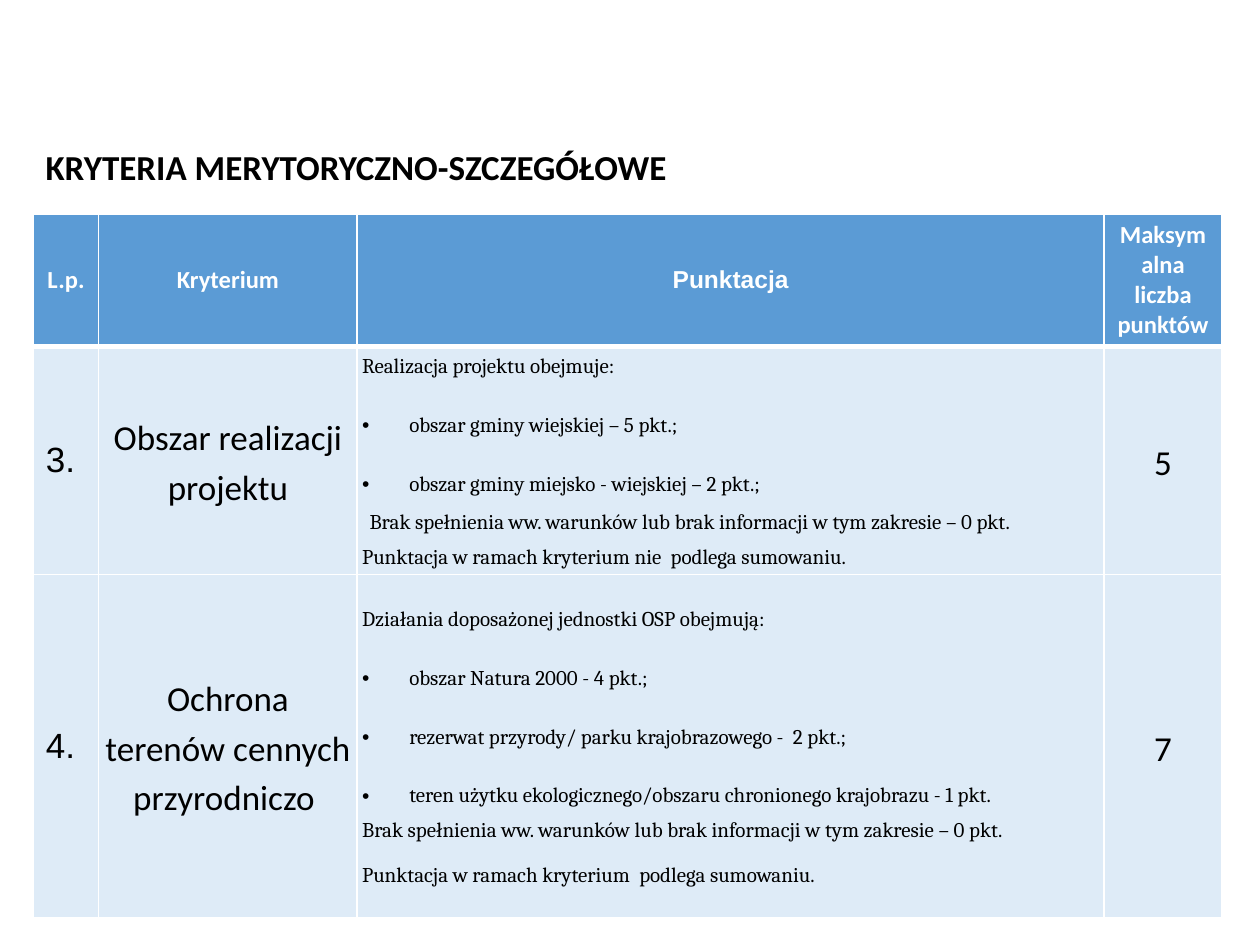
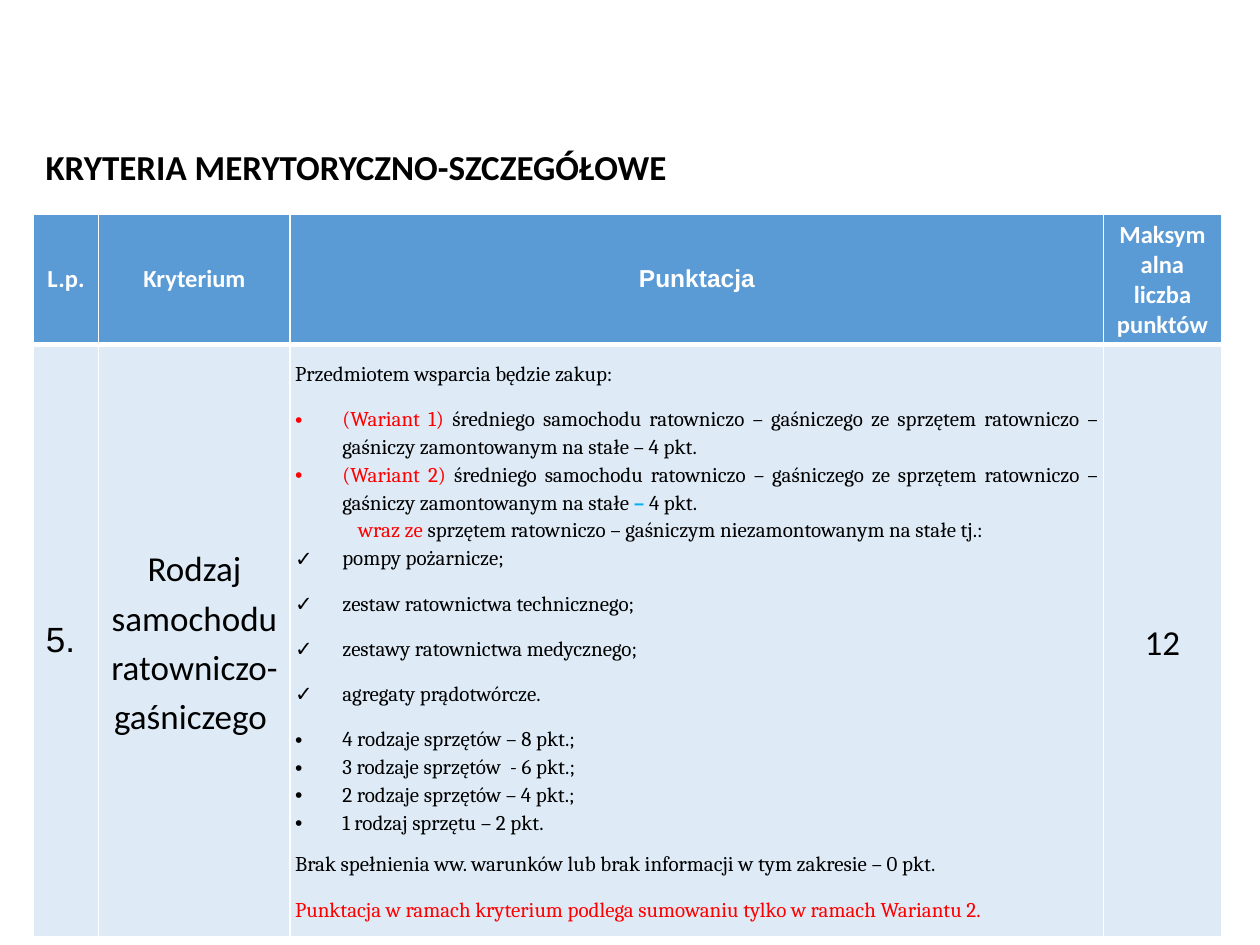
"""Builds two slides with tables of detailed merit criteria and their scoring."""
from dataclasses import dataclass

from lxml import etree
from pptx import Presentation
from pptx import util as u
from pptx.dml.color import RGBColor
from pptx.enum import text
from pptx.oxml.ns import qn


@dataclass(frozen=True)
class Theme:
    header: str = "5B9BD5"
    body: str = "DEEBF7"
    white: str = "FFFFFF"
    black: str = "000000"
    red: str = "FF0000"
    blue: str = "00B0F0"
    main: str = "Calibri"
    number: str = "Arial"
    detail: str = "Cambria"
    big: int = 20
    medium: int = 14
    small: int = 12


T = Theme()
LEFT, CENTER, JUSTIFY = (text.PP_ALIGN.LEFT, text.PP_ALIGN.CENTER,
                         text.PP_ALIGN.JUSTIFY)


def write(tf, content, size=T.big, font=T.main, color=T.black, bold=False,
          align=LEFT, line=None, after=None, left=0, bullet=None):
    """Add a paragraph; content is a string or a list of (text, format) runs."""
    p = tf.paragraphs[0]
    if p.runs:
        p = tf.add_paragraph()
    p.alignment = align
    pPr = p._p.get_or_add_pPr()
    if left:
        pPr.set("marL", str(u.Cm(left)))
        pPr.set("indent", str(-u.Cm(left) if bullet else 0))
    if bullet:
        etree.SubElement(pPr, qn("a:buFont")).set("typeface", T.number)
        etree.SubElement(pPr, qn("a:buChar")).set("char", bullet)
    if line:
        p.line_spacing = line
    if after:
        p.space_after = u.Pt(after)
    for words, own in [(content, {})] if isinstance(content, str) else content:
        r = p.add_run()
        r.text = words
        r.font.size, r.font.name = u.Pt(size), font
        r.font.bold = own.get("bold", bold)
        r.font.color.rgb = RGBColor.from_string(own.get("color", color))


def style_cell(cell, fill, top, bottom):
    """Fill a cell, draw its white borders and centre it vertically."""
    tcPr = cell._tc.get_or_add_tcPr()
    for side, width in zip("LRTB", (1, 1, top, bottom)):
        ln = etree.SubElement(tcPr, qn(f"a:ln{side}"), w=str(u.Pt(width)))
        solid = etree.SubElement(ln, qn("a:solidFill"))
        etree.SubElement(solid, qn("a:srgbClr"), val=T.white)
    cell.fill.solid()
    cell.fill.fore_color.rgb = RGBColor.from_string(fill)
    cell.vertical_anchor = text.MSO_ANCHOR.MIDDLE


TITLE = "KRYTERIA MERYTORYCZNO-SZCZEGÓŁOWE"
HEADERS = [("L.p.", T.main), ("Kryterium", T.main), ("Punktacja", T.number),
           ("Maksymalna liczba punktów", T.main)]
NO_POINTS = "Brak spełnienia ww. warunków lub brak informacji w tym zakresie – 0 pkt."
VEHICLE = ("średniego samochodu ratowniczo – gaśniczego ze sprzętem "
           "ratowniczo – gaśniczy zamontowanym na stałe ")
RED, BLUE_BOLD = {"color": T.red}, {"color": T.blue, "bold": True}

plain = {}
lead = dict(align=JUSTIFY, line=1.15, after=6)
lead_wide = dict(lead, after=10)
shifted = dict(lead, left=0.15)
closing = dict(align=JUSTIFY, after=12)
loose = dict(align=JUSTIFY, line=2.0, after=6, left=0.95, bullet="•")
tight = dict(align=JUSTIFY, line=1.15, left=0.95, bullet="•")
tight_last = dict(tight, after=10)
check = dict(tight_last, bullet="✓")
addition = dict(align=JUSTIFY, line=1.15, left=1.27)

SLIDES = [
    dict(cols=(1.32, 5.21, 15.06, 2.37), criteria=[
        ("3.", "Obszar realizacji projektu", "5", 4.39, [
            ("Realizacja projektu obejmuje:", lead),
            ("obszar gminy wiejskiej – 5 pkt.;", loose),
            ("obszar gminy miejsko - wiejskiej – 2 pkt.;", loose),
            (NO_POINTS, shifted),
            ("Punktacja w ramach kryterium nie  podlega sumowaniu.", plain),
        ]),
        ("4.", "Ochrona terenów cennych przyrodniczo ", "7", 6.91, [
            ("Działania doposażonej jednostki OSP obejmują:", lead),
            ("obszar Natura 2000 - 4 pkt.;", loose),
            ("rezerwat przyrody/ parku krajobrazowego -  2 pkt.;", loose),
            ("teren użytku ekologicznego/obszaru chronionego krajobrazu - 1 pkt.",
             loose),
            (NO_POINTS, closing),
            ("Punktacja w ramach kryterium  podlega sumowaniu.", plain),
        ]),
    ]),
    dict(cols=(1.32, 3.86, 16.4, 2.37), criteria=[
        ("5.", "Rodzaj samochodu ratowniczo- gaśniczego ", "12", 11.2, [
            ("Przedmiotem wsparcia będzie zakup:", lead_wide),
            ([("(Wariant 1) ", RED), (VEHICLE + "– 4 pkt.", {})], tight),
            ([("(Wariant 2) ", RED), (VEHICLE, {}), ("– ", BLUE_BOLD),
              ("4 pkt.", {})], tight),
            ([("wraz ze ", RED),
              ("sprzętem ratowniczo – gaśniczym niezamontowanym na stałe tj.:",
               {})], addition),
            ("pompy pożarnicze;", check),
            ("zestaw ratownictwa technicznego;", check),
            ("zestawy ratownictwa medycznego;", check),
            ("agregaty prądotwórcze.", check),
            ("4 rodzaje sprzętów – 8 pkt.;", tight),
            ("3 rodzaje sprzętów  - 6 pkt.;", tight),
            ("2 rodzaje sprzętów – 4 pkt.;", tight),
            ("1 rodzaj sprzętu – 2 pkt.", tight_last),
            (NO_POINTS, closing),
            ("Punktacja w ramach kryterium podlega sumowaniu tylko "
             "w ramach Wariantu 2.", RED),
        ]),
    ]),
]

prs = Presentation()
prs.slide_width, prs.slide_height = u.Cm(25.4), u.Cm(19.05)

for page in SLIDES:
    s = prs.slides.add_slide(prs.slide_layouts[6])
    heights = [2.57] + [criterion[3] for criterion in page["criteria"]]
    table = s.shapes.add_table(
        len(heights), len(HEADERS), u.Cm(0.67), u.Cm(4.32),
        u.Cm(sum(page["cols"])), u.Cm(sum(heights))).table
    table.horz_banding = False
    for column, width in zip(table.columns, page["cols"]):
        column.width = u.Cm(width)
    for row, height in zip(table.rows, heights):
        row.height = u.Cm(height)

    for cell, (label, font) in zip(table.rows[0].cells, HEADERS):
        style_cell(cell, T.header, top=1, bottom=3)
        write(cell.text_frame, label, size=T.medium, font=font,
              color=T.white, bold=True, align=CENTER)

    for i, (number, name, points, _, scoring) in enumerate(page["criteria"], 1):
        cells = list(table.rows[i].cells)
        for j, cell in enumerate(cells):
            style_cell(cell, T.body, top=3 if i == 1 else 1, bottom=1)
            if j:
                cell.margin_left = cell.margin_right = u.Cm(0.1)
                cell.margin_top = cell.margin_bottom = u.Cm(0.1)
        write(cells[0].text_frame, number, font=T.number)
        write(cells[1].text_frame, name, align=CENTER, line=1.15)
        for content, fmt in scoring:
            write(cells[2].text_frame, content, size=T.small, font=T.detail, **fmt)
        write(cells[3].text_frame, points, align=CENTER, line=1.15)

    sp = s.shapes.add_textbox(u.Cm(0.67), u.Cm(2.79), u.Cm(13.13), u.Cm(1.12))
    tf = sp.text_frame
    tf.word_wrap = False
    tf.auto_size = text.MSO_AUTO_SIZE.SHAPE_TO_FIT_TEXT
    tf.vertical_anchor = text.MSO_ANCHOR.MIDDLE
    write(tf, TITLE, bold=True)

prs.save("out.pptx")
